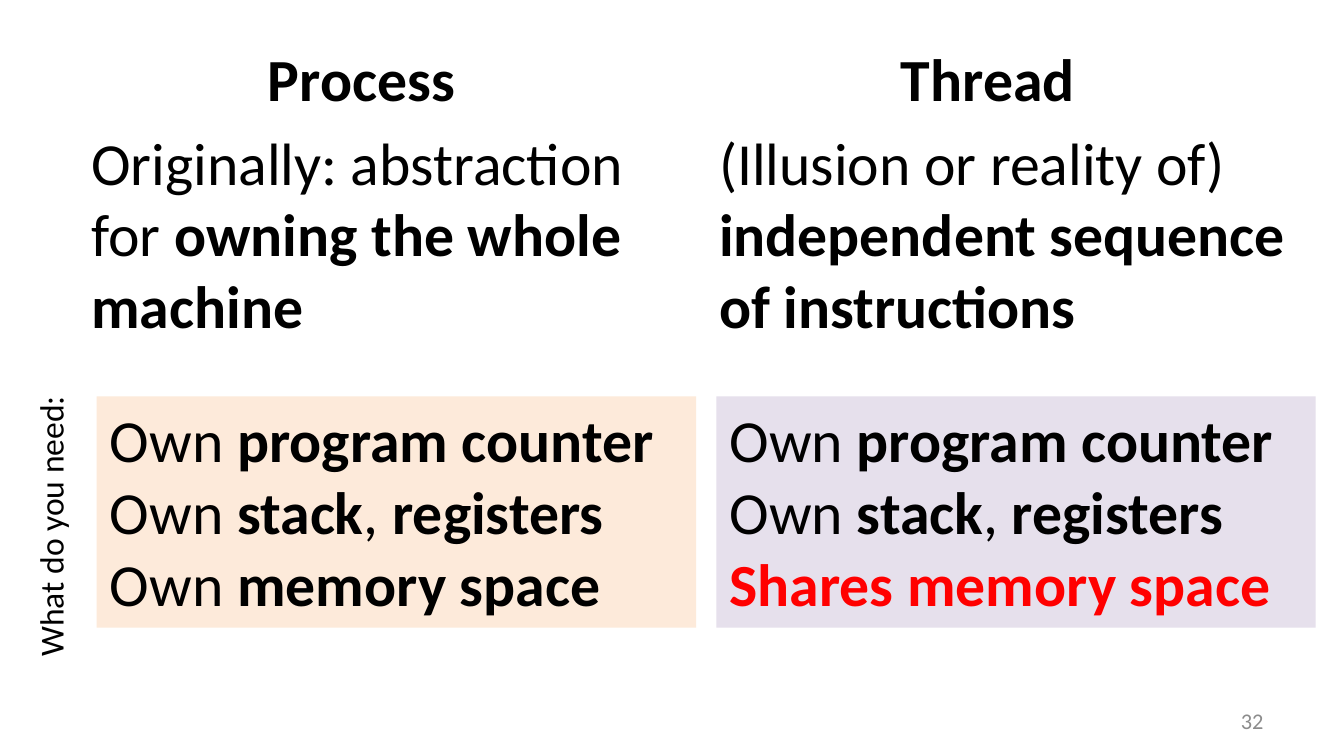
"""Builds a slide comparing processes and threads."""
import pptx
import pptx.util
import pptx.dml.color
import pptx.enum.shapes
import pptx.enum.text
import pptx.oxml

Inches = pptx.util.Inches
Pt = pptx.util.Pt
Align = pptx.enum.text.PP_ALIGN
Anchor = pptx.enum.text.MSO_ANCHOR
Fit = pptx.enum.text.MSO_AUTO_SIZE
COLORS = {"black": "000000", "red": "FF0000", "gray": "8C8C8C",
          "peach": "FDEADA", "lilac": "E6E0EC"}


def color(name):
    return pptx.dml.color.RGBColor.from_string(COLORS[name])


def write(para, text, size=32, tint="black"):
    """Fill a paragraph, with the parts between asterisks in bold."""
    for i, part in enumerate(text.split("*")):
        if part:
            run = para.add_run()
            run.text = part
            run.font.name = "Calibri"
            run.font.size = Pt(size)
            run.font.bold = i % 2 == 1
            run.font.color.rgb = color(tint)


deck = pptx.Presentation()
deck.slide_width = Inches(10)
deck.slide_height = Inches(10) * 9 // 16
slide = deck.slides.add_slide(deck.slide_layouts[3])
title = slide.shapes.title
title.element.getparent().remove(title.element)

bodies = [
    (1, 0.2, 4.98, 3.71, "*Process*",
     "Originally: abstraction for *owning the whole machine*"),
    (2, 4.87, 4.96, 2.43, "*Thread*",
     "(Illusion or reality of) *independent sequence of instructions*"),
]
for idx, left, width, height, head, text in bodies:
    body = slide.placeholders[idx]
    body.left, body.top = Inches(left), Inches(0.26)
    body.width, body.height = Inches(width), Inches(height)
    frame = body.text_frame
    frame.auto_size = Fit.NONE
    first, second = frame.paragraphs[0], frame.add_paragraph()
    for para, indent in ((first, 0), (second, 0.38)):
        props = para._p.get_or_add_pPr()
        props.set("marL", str(Inches(indent)))
        props.set("indent", "0")
        props.append(pptx.oxml.parse_xml(
            '<a:buNone xmlns:a="http://schemas.openxmlformats.org/drawingml/2006/main"/>'))
    first.alignment = Align.CENTER
    first.space_before = Pt(0)
    second.space_before = Pt(6.4)
    write(first, head)
    write(second, text)

shared = [("Own *program counter*", "black"),
          ("Own *stack*, *registers*", "black")]
needs = [
    (0.72, "peach", ("Own *memory space*", "black")),
    (5.33, "lilac", ("*Shares memory space*", "red")),
]
for left, fill, last in needs:
    box = slide.shapes.add_shape(
        pptx.enum.shapes.MSO_SHAPE.RECTANGLE,
        Inches(left), Inches(2.95), Inches(4.46), Inches(1.72))
    box.shadow.inherit = False
    box.fill.solid()
    box.fill.fore_color.rgb = color(fill)
    box.line.fill.background()
    frame = box.text_frame
    frame.word_wrap = True
    frame.vertical_anchor = Anchor.TOP
    for i, (text, tint) in enumerate(shared + [last]):
        para = frame.add_paragraph() if i else frame.paragraphs[0]
        para.alignment = Align.LEFT
        write(para, text, tint=tint)

label = slide.shapes.add_textbox(
    Inches(-0.71), Inches(3.7), Inches(2.17), Inches(0.4))
label.rotation = 270
label.text_frame.word_wrap = False
write(label.text_frame.paragraphs[0], "What do you need:", 18)

number = slide.shapes.add_textbox(
    Inches(7.17), Inches(5.21), Inches(2.33), Inches(0.3))
number.text_frame.word_wrap = True
number.text_frame.vertical_anchor = Anchor.MIDDLE
number.text_frame.paragraphs[0].alignment = Align.RIGHT
write(number.text_frame.paragraphs[0], "32", 12, "gray")

deck.save("out.pptx")
